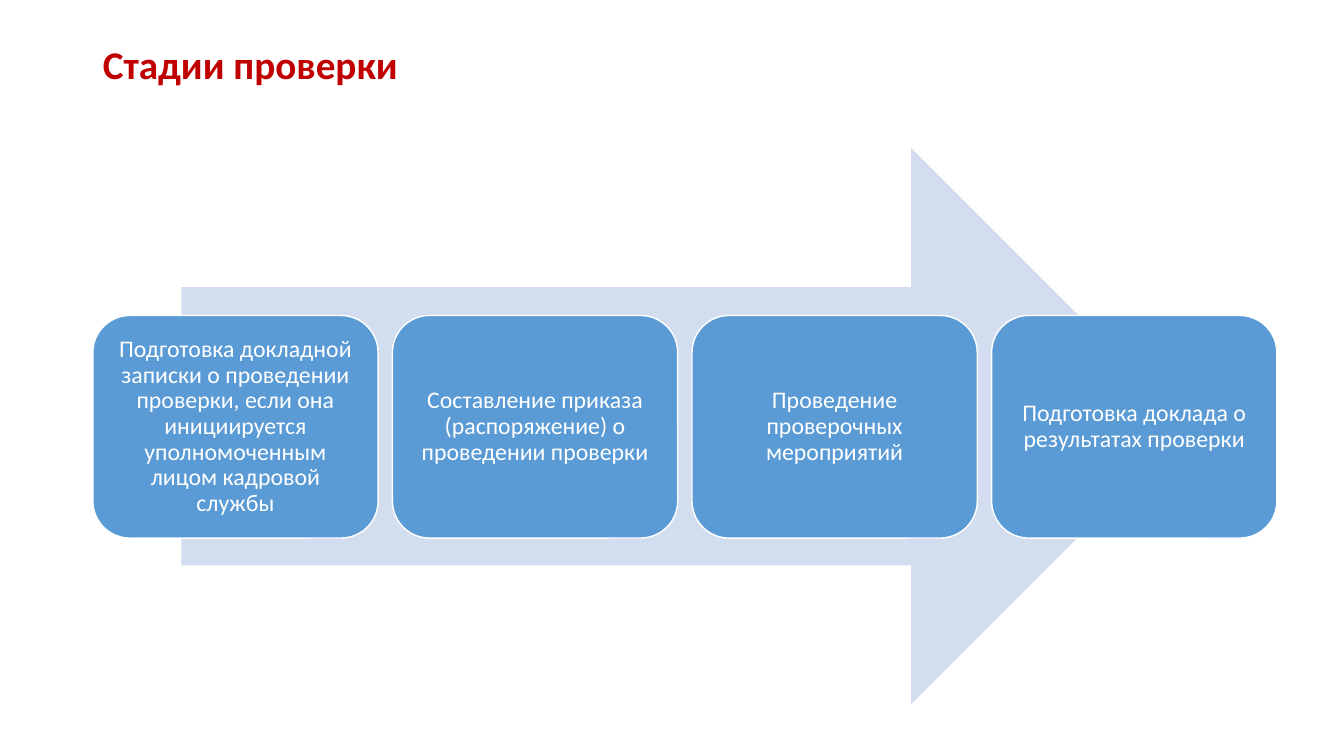
from pptx import Presentation
from pptx.dml.color import RGBColor
from pptx.enum.shapes import MSO_SHAPE
from pptx.enum.text import MSO_ANCHOR, PP_ALIGN
from pptx.util import Cm, Pt

COLORS = {
    "heading": "C00000",
    "arrow": "D2DEEF",
    "stage": "5B9BD5",
    "white": "FFFFFF",
}
FONT = "Calibri"
STAGES = [
    "Подготовка докладной записки о проведении проверки, если она "
    "инициируется уполномоченным лицом кадровой службы",
    "Составление приказа (распоряжение) о проведении проверки",
    "Проведение проверочных мероприятий",
    "Подготовка доклада о результатах проверки",
]
# Stage row, in centimetres
ROW_LEFT, ROW_TOP = 2.34, 7.95
STAGE_WIDTH, STAGE_HEIGHT = 7.19, 5.61
STAGE_PITCH = 7.55


def color(name):
    return RGBColor.from_string(COLORS[name])


def format_text(frame, size, color_name, align, bold=False):
    frame.word_wrap = True
    for paragraph in frame.paragraphs:
        paragraph.alignment = align
        paragraph.line_spacing = 0.9
        for run in paragraph.runs:
            run.font.name = FONT
            run.font.size = Pt(size)
            run.font.bold = bold
            run.font.color.rgb = color(color_name)


def set_heading(slide, text):
    heading = slide.shapes.title
    heading.left, heading.top = Cm(2.34), Cm(1.02)
    heading.width, heading.height = Cm(29.21), Cm(1.68)
    frame = heading.text_frame
    frame.text = text
    frame.vertical_anchor = MSO_ANCHOR.TOP
    format_text(frame, 28, "heading", PP_ALIGN.LEFT, bold=True)


def add_block(slide, preset, left, top, width, height, fill):
    block = slide.shapes.add_shape(
        preset, Cm(left), Cm(top), Cm(width), Cm(height))
    block.shadow.inherit = False
    block.fill.solid()
    block.fill.fore_color.rgb = color(fill)
    block.line.fill.background()
    return block


def add_stage(slide, index, text):
    stage = add_block(slide, MSO_SHAPE.ROUNDED_RECTANGLE,
                      ROW_LEFT + index * STAGE_PITCH, ROW_TOP,
                      STAGE_WIDTH, STAGE_HEIGHT, "stage")
    stage.line.color.rgb = color("white")
    stage.line.width = Pt(1)
    frame = stage.text_frame
    frame.text = text
    frame.vertical_anchor = MSO_ANCHOR.MIDDLE
    frame.margin_left = frame.margin_right = Cm(0.18)
    frame.margin_top = frame.margin_bottom = Cm(0.18)
    format_text(frame, 17, "white", PP_ALIGN.CENTER)


def main():
    deck = Presentation()
    deck.slide_width, deck.slide_height = Cm(33.87), Cm(19.05)
    slide = deck.slides.add_slide(deck.slide_layouts[5])

    # Heading
    set_heading(slide, "Стадии проверки")

    # Arrow behind the stages
    add_block(slide, MSO_SHAPE.RIGHT_ARROW, 4.57, 3.73, 25.4, 14.02, "arrow")

    # Stages from left to right
    for index, text in enumerate(STAGES):
        add_stage(slide, index, text)

    deck.save("out.pptx")


if __name__ == "__main__":
    main()
